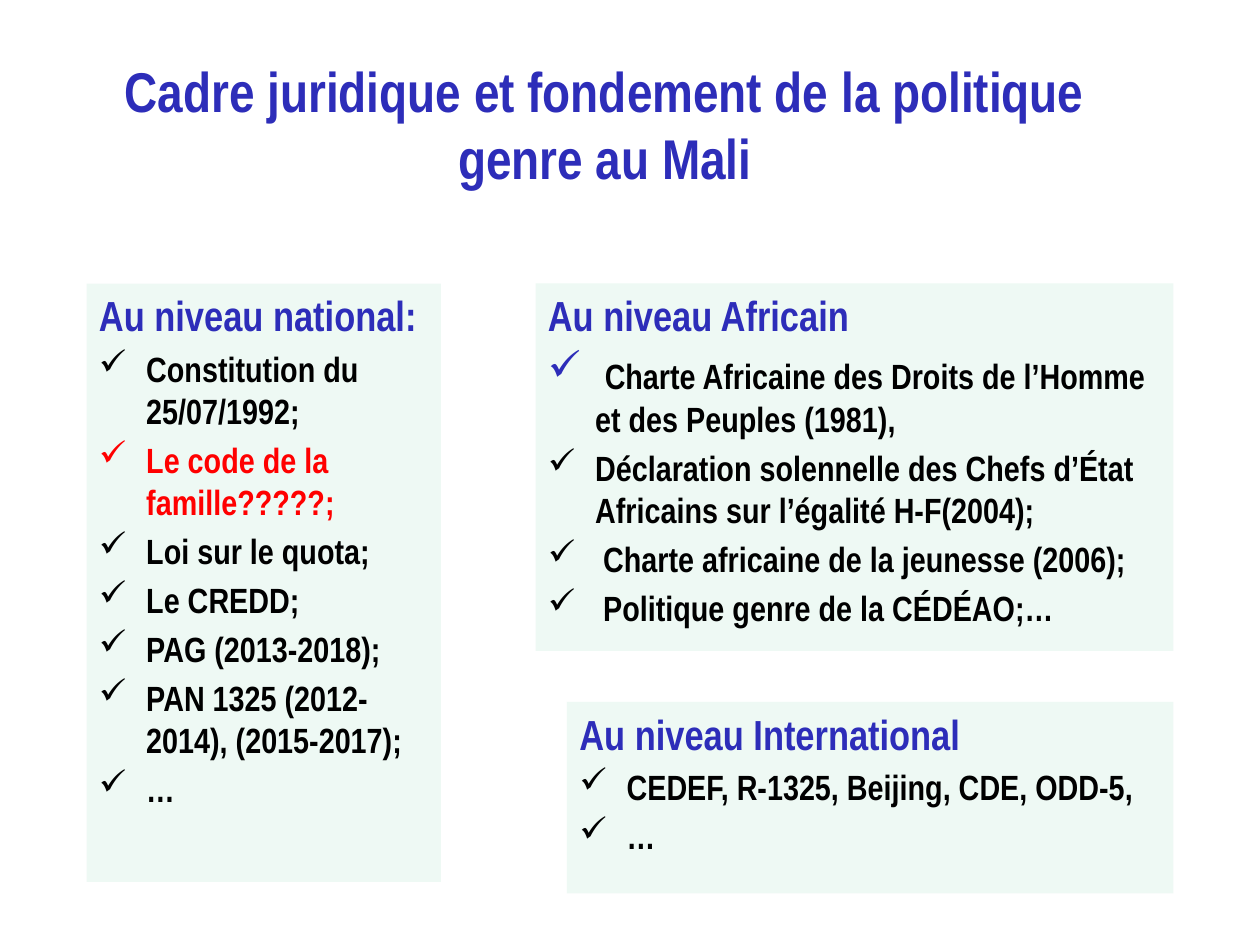
from lxml import etree
from pptx import Presentation
from pptx import util as u
from pptx.dml.color import RGBColor
from pptx.enum import shapes, text
from pptx.oxml.ns import qn

COLORS = {"blue": "2D2DB9", "black": "000000", "red": "FF0000", "mint": "EEF9F4"}
FONT = "Arial Narrow"
INDENT = u.Inches(0.375)

deck = Presentation()
deck.slide_width, deck.slide_height = u.Inches(10), u.Inches(7.5)
page = deck.slides.add_slide(deck.slide_layouts[6])

# Grid of 40 columns by 30 rows
COL, ROW = deck.slide_width / 40, deck.slide_height / 30


def place(left, top, right, bottom):
    """Turn grid edges into left, top, width and height."""
    return [int(n) for n in (left * COL, top * ROW, (right - left) * COL, (bottom - top) * ROW)]


def write(para, words, size=20, color="black", align=text.PP_ALIGN.LEFT, gap=0.2, bullet=False):
    """Add a bold run; the gap before the paragraph is a share of the text size."""
    para.alignment = align
    para.space_before = u.Pt(size * gap)
    span = para.add_run()
    span.text = words
    span.font.name, span.font.size, span.font.bold = FONT, u.Pt(size), True
    span.font.color.rgb = RGBColor.from_string(COLORS[color])
    if bullet:
        props = para._p.get_or_add_pPr()
        props.set("marL", str(INDENT))
        props.set("indent", str(-INDENT))
        etree.SubElement(props, qn("a:buChar")).set("char", "✓")


# Title
box = page.shapes.add_textbox(*place(2.75, 1.6, 35.67, 7.4))
box.text_frame.word_wrap = True
write(box.text_frame.paragraphs[0], "Cadre juridique et fondement de la politique genre au Mali",
      size=32, color="blue", align=text.PP_ALIGN.CENTER, gap=0)

# Panels: grid edges, heading, bulleted items
panels = [
    ((2.75, 9, 14, 28), "Au niveau national:", [
        "Constitution du 25/07/1992;",
        "Le code de la famille?????;",
        "Loi sur le quota;",
        "Le CREDD;",
        "PAG (2013-2018);",
        "PAN 1325 (2012-2014), (2015-2017);",
        "…",
    ]),
    ((17, 9, 37.25, 20.67), "Au niveau Africain", [
        "Charte Africaine des Droits de l’Homme et des Peuples (1981),",
        "Déclaration solennelle des Chefs d’État Africains sur l’égalité H-F(2004);",
        " Charte africaine de la jeunesse (2006);",
        " Politique genre de la CÉDÉAO;…",
    ]),
    ((18, 22.28, 37.25, 28.36), "Au niveau International", [
        "CEDEF, R-1325, Beijing, CDE, ODD-5,",
        "…",
    ]),
]

for edges, heading, items in panels:
    panel = page.shapes.add_shape(shapes.MSO_SHAPE.RECTANGLE, *place(*edges))
    panel.shadow.inherit = False
    panel.fill.solid()
    panel.fill.fore_color.rgb = RGBColor.from_string(COLORS["mint"])
    panel.line.fill.background()
    frame = panel.text_frame
    frame.word_wrap = True
    frame.vertical_anchor = text.MSO_ANCHOR.TOP
    write(frame.paragraphs[0], heading, size=24, color="blue")
    for item in items:
        para = frame.add_paragraph()
        # A large blue leading space gives this item its larger blue tick
        if item.startswith("Charte Africaine"):
            write(para, " ", size=24, color="blue")
        write(para, item, color="red" if "famille" in item else "black", bullet=True)

deck.save("out.pptx")
